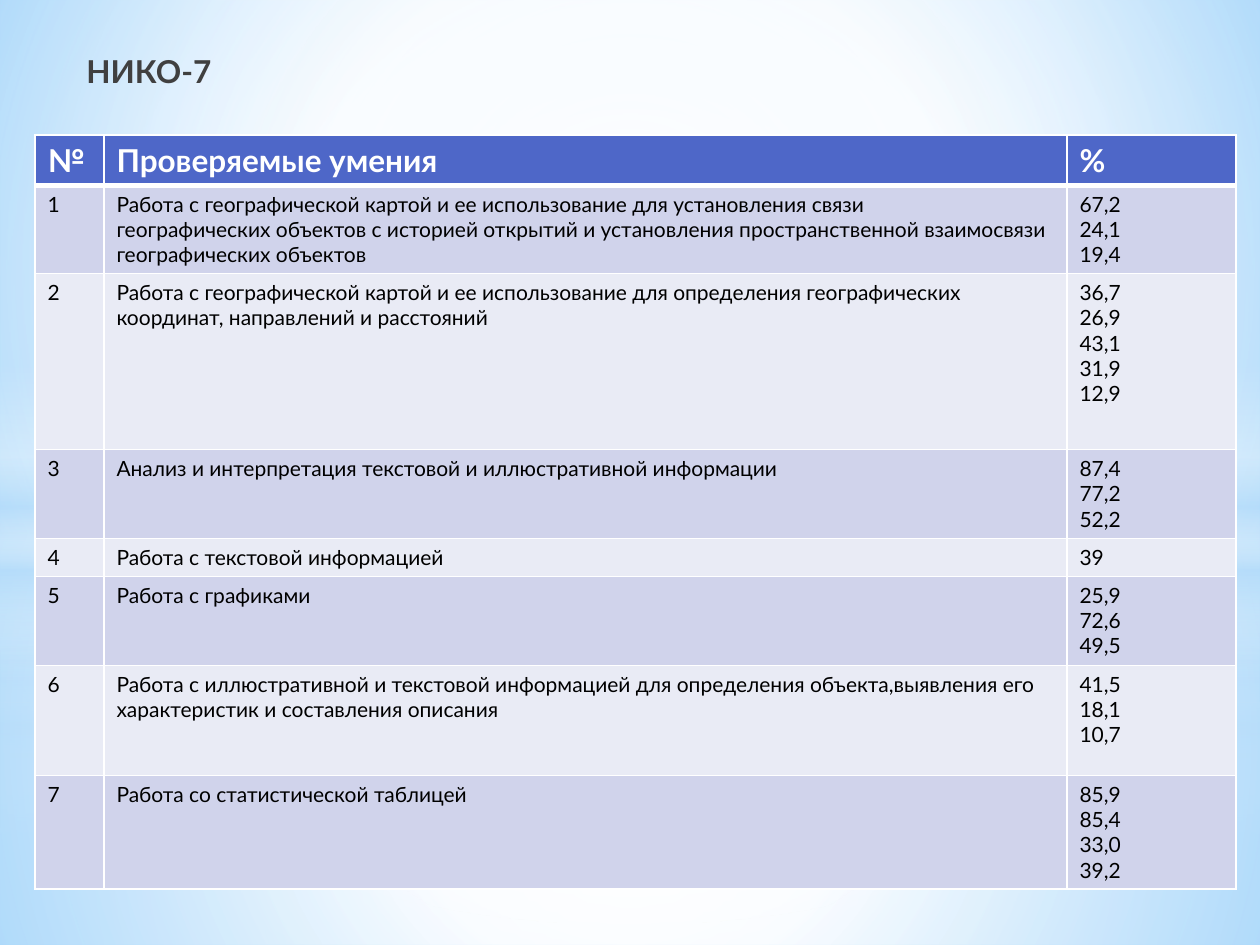
from dataclasses import dataclass
from itertools import accumulate
from typing import Any

from pptx import Presentation
from pptx.dml.color import RGBColor
from pptx.enum.shapes import MSO_SHAPE as Shape
from pptx.enum.text import MSO_ANCHOR as Anchor
from pptx.oxml import parse_xml
from pptx.oxml.ns import nsdecls, qn
from pptx.util import Emu, Pt

PIXELS_PER_INCH = 126
WIDTH, HEIGHT = 1260, 945
FONT = "Lato"
WHITE, SKY = "FFFFFF", "B4DCFA"
HEADER_FILL = "4E67C8"
BAND_FILLS = ("D0D3EB", "E9EBF5")
CENTER = (50, 50, 50, 50)


@dataclass(frozen=True)
class Stop:
    position: int
    color: str
    opacity: int = 100


@dataclass(frozen=True)
class Gradient:
    stops: tuple[Stop, ...]
    focus: tuple[int, int, int, int] | None = None


@dataclass(frozen=True)
class Layer:
    kind: Any
    top: int
    height: int
    gradient: Gradient


@dataclass(frozen=True)
class Skill:
    paragraphs: tuple[str, ...]
    percents: tuple[str, ...]
    height: int


def px(value: int) -> Emu:
    return Emu(round(value * 914400 / PIXELS_PER_INCH))


def rgb(color: str) -> RGBColor:
    return RGBColor.from_string(color)


def glow(middle: int, *opacities: int) -> Gradient:
    stops = zip((0, middle, 100), (WHITE, WHITE, SKY), opacities)
    return Gradient(tuple(Stop(*stop) for stop in stops), CENTER)


def halo(edge: int) -> Gradient:
    return Gradient((Stop(0, WHITE), Stop(edge, WHITE, 0)), CENTER)


BACKGROUND = Gradient(
    (Stop(0, "9ED5FF"), Stop(60, WHITE), Stop(100, "5BB9FF")), (20, 10, 20, 60))
TITLE_GRADIENT = Gradient(
    (Stop(0, "000000"), Stop(40, "404040"), Stop(100, "212745", 65)))
HORIZON = Gradient((
    Stop(0, WHITE, 0), Stop(29, WHITE, 30), Stop(45, SKY, 40),
    Stop(55, WHITE, 26), Stop(65, SKY, 60), Stop(100, WHITE, 0)))

LAYERS = (
    Layer(Shape.RECTANGLE, 703, 242, glow(37, 91, 76, 79)),
    Layer(Shape.RECTANGLE, 0, 703, glow(48, 89, 62, 79)),
    Layer(Shape.RECTANGLE, 519, 315, HORIZON),
    Layer(Shape.OVAL, 220, 703, halo(56)),
    Layer(Shape.RECTANGLE, 533, 412, glow(37, 92, 77, 80)),
    Layer(Shape.RECTANGLE, 0, 533, glow(48, 90, 63, 80)),
    Layer(Shape.RECTANGLE, 365, 315, HORIZON),
    Layer(Shape.OVAL, 220, 703, halo(54)),
)

HEADERS = ("№", "Проверяемые умения", "%")
HEADER_HEIGHT = 50
COLUMN_WIDTHS = (69, 963, 169)
SKILLS = (
    Skill(("Работа с географической картой и ее использование для установления связи",
           "географических объектов с историей открытий и установления "
           "пространственной взаимосвязи географических объектов"),
          ("67,2", "24,1", "19,4"), 88),
    Skill(("Работа с географической картой и ее использование для определения "
           "географических координат, направлений и расстояний",),
          ("36,7", "26,9", "43,1", "31,9", "12,9"), 176),
    Skill(("Анализ и интерпретация текстовой и иллюстративной информации",),
          ("87,4", "77,2", "52,2"), 89),
    Skill(("Работа с текстовой информацией",), ("39",), 37),
    Skill(("Работа с графиками",), ("25,9", "72,6", "49,5"), 89),
    Skill(("Работа с иллюстративной и текстовой информацией для определения "
           "объекта,выявления его характеристик и составления описания",),
          ("41,5", "18,1", "10,7"), 110),
    Skill(("Работа со статистической таблицей",),
          ("85,9", "85,4", "33,0", "39,2"), 113),
)

HEADER_FORMAT = {"name": FONT, "size": Pt(18), "bold": True}
BODY_FORMAT = {"name": FONT, "size": Pt(12), "bold": False}


def paint_gradient(element: Any, gradient: Gradient) -> None:
    stops = "".join(
        f'<a:gs pos="{stop.position * 1000}"><a:srgbClr val="{stop.color}">'
        f'<a:alpha val="{stop.opacity * 1000}"/></a:srgbClr></a:gs>'
        for stop in gradient.stops)
    if gradient.focus:
        sides = " ".join(f'{side}="{value * 1000}"'
                         for side, value in zip("ltrb", gradient.focus))
        direction = f'<a:path path="circle"><a:fillToRect {sides}/></a:path>'
    else:
        direction = '<a:lin ang="5400000" scaled="0"/>'
    solid = next(element.iter(qn("a:solidFill")))
    solid.getparent().replace(solid, parse_xml(
        f'<a:gradFill {nsdecls("a")} rotWithShape="1">'
        f'<a:gsLst>{stops}</a:gsLst>{direction}</a:gradFill>'))


def add_layer(slide: Any, layer: Layer) -> None:
    shape = slide.shapes.add_shape(
        layer.kind, px(0), px(layer.top), px(WIDTH), px(layer.height))
    shape.shadow.inherit = False
    shape.line.fill.background()
    shape.fill.solid()
    paint_gradient(shape.element, layer.gradient)


def write_text(frame: Any, lines: tuple[str, ...], formats: dict[str, Any],
               color: str) -> None:
    for index, line in enumerate(lines):
        paragraph = frame.add_paragraph() if index else frame.paragraphs[0]
        run = paragraph.add_run()
        run.text = line
        for name, value in formats.items():
            setattr(run.font, name, value)
        run.font.color.rgb = rgb(color)


def add_title(slide: Any) -> None:
    shape = slide.shapes.add_textbox(px(74), px(66), px(1081), px(30))
    shape.text_frame.word_wrap = True
    shape.text_frame.vertical_anchor = Anchor.BOTTOM
    write_text(shape.text_frame, ("НИКО-7",), HEADER_FORMAT, "404040")
    paint_gradient(shape.element, TITLE_GRADIENT)


def add_borders(cell_element: Any, row: int) -> None:
    points = {"L": 1, "R": 1, "T": 3 if row == 1 else 1, "B": 3 if row == 0 else 1}
    properties = cell_element.get_or_add_tcPr()
    for index, (side, width) in enumerate(points.items()):
        properties.insert(index, parse_xml(
            f'<a:ln{side} {nsdecls("a")} w="{Pt(width)}"><a:solidFill>'
            f'<a:srgbClr val="{WHITE}"/></a:solidFill></a:ln{side}>'))


def add_skill_table(slide: Any) -> None:
    heights = (HEADER_HEIGHT, *(skill.height for skill in SKILLS))
    contents = [tuple((header,) for header in HEADERS)]
    contents += [((str(number),), skill.paragraphs, skill.percents)
                 for number, skill in enumerate(SKILLS, 1)]
    frame = slide.shapes.add_table(
        len(heights), len(COLUMN_WIDTHS), px(35), px(135),
        px(sum(COLUMN_WIDTHS)), px(sum(heights)))
    table = frame.table
    for column, width in zip(table.columns, COLUMN_WIDTHS):
        column.width = px(width)
    edges = [px(edge) for edge in accumulate(heights, initial=0)]
    for row, top, bottom in zip(table.rows, edges, edges[1:]):
        row.height = Emu(bottom - top)
    cells = zip(table.iter_cells(), frame.element.iter(qn("a:tc")))
    for index, (cell, cell_element) in enumerate(cells):
        row, column = divmod(index, len(COLUMN_WIDTHS))
        cell.fill.solid()
        cell.fill.fore_color.rgb = rgb(BAND_FILLS[(row - 1) % 2] if row else HEADER_FILL)
        write_text(cell.text_frame, contents[row][column],
                   BODY_FORMAT if row else HEADER_FORMAT, "000000" if row else WHITE)
        add_borders(cell_element, row)


def main() -> None:
    presentation = Presentation()
    presentation.slide_width, presentation.slide_height = px(WIDTH), px(HEIGHT)
    slide = presentation.slides.add_slide(presentation.slide_layouts[6])
    slide.background.fill.solid()
    paint_gradient(slide.element, BACKGROUND)
    for layer in LAYERS:
        add_layer(slide, layer)
    add_title(slide)
    add_skill_table(slide)
    presentation.save("out.pptx")


if __name__ == "__main__":
    main()
